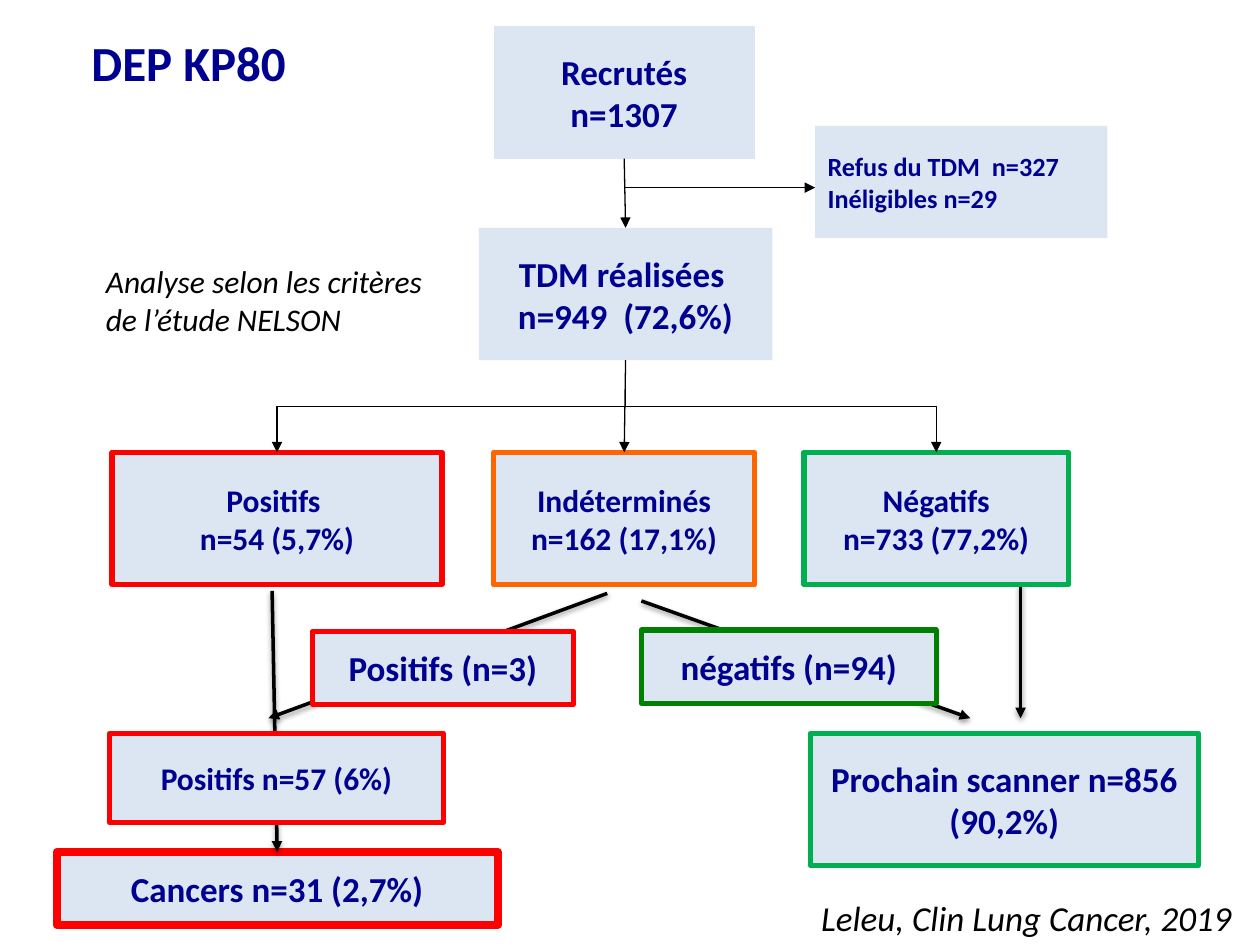
from lxml.etree import SubElement
from pptx import Presentation
from pptx.dml.color import RGBColor
from pptx.enum.shapes import MSO_CONNECTOR as Link, MSO_SHAPE as Form
from pptx.enum.text import MSO_ANCHOR as Anchor, MSO_AUTO_SIZE as Fit, PP_ALIGN as Align
from pptx.oxml.ns import qn
from pptx.util import Pt

NAVY = RGBColor(0x00, 0x00, 0x90)
BLACK = RGBColor(0x00, 0x00, 0x00)
PALE = RGBColor(0xDC, 0xE6, 0xF2)
RED = RGBColor(0xFF, 0x00, 0x00)
ORANGE = RGBColor(0xFF, 0x66, 0x00)
GREEN = RGBColor(0x00, 0xB0, 0x50)
DARK = RGBColor(0x00, 0x80, 0x00)
FONT = "Calibri"
RECT, STEP = Form.RECTANGLE, Form.FLOWCHART_PROCESS
TALL, LOW = 75.6, 41.8  # common box heights


def style(frame, size, color, align, bold=False, italic=False):
    for para in frame.paragraphs:
        para.alignment = align
        for run in para.runs:
            font = run.font
            font.name, font.size = FONT, Pt(size)
            font.bold, font.italic = bold, italic
            font.color.rgb = color


def node(slide, box, text, size=20, edge=None, width=3, form=RECT, align=Align.CENTER):
    """Pale box of the flow chart."""
    shape = slide.shapes.add_shape(form, *map(Pt, box))
    shape.shadow.inherit = False
    shape.fill.solid()
    shape.fill.fore_color.rgb = PALE
    if edge is None:
        shape.line.fill.background()
    else:
        shape.line.color.rgb = edge
        shape.line.width = Pt(width)
    frame = shape.text_frame
    frame.text = text
    frame.word_wrap = True
    frame.vertical_anchor = Anchor.MIDDLE
    style(frame, size, NAVY, align, bold=True)
    return shape


def label(slide, box, text, size, color=BLACK, align=Align.LEFT, wrap=True, fit=Fit.SHAPE_TO_FIT_TEXT, **look):
    frame = slide.shapes.add_textbox(*map(Pt, box)).text_frame
    frame.text = text
    frame.word_wrap = wrap
    frame.auto_size = fit
    style(frame, size, color, align, **look)


def arrow(slide, start, end, width=0.75, shade=False, kind=Link.STRAIGHT):
    line = slide.shapes.add_connector(kind, *map(Pt, start + end))
    line.line.color.rgb = BLACK
    line.line.width = Pt(width)
    props = line._element.spPr
    SubElement(props.find(qn("a:ln")), qn("a:tailEnd"), type="triangle")
    glow = SubElement(props, qn("a:effectLst"))
    if shade:
        cast = SubElement(glow, qn("a:outerShdw"), blurRad=str(Pt(3.1)), dist=str(Pt(1.6)),
                          dir="5400000", rotWithShape="0")
        tint = SubElement(cast, qn("a:srgbClr"), val="000000")
        SubElement(tint, qn("a:alpha"), val="38000")
    return line


def elbow(slide, start, end, form="bentConnector3"):
    """Bent arrow that leaves downwards: a turned and, to the right, flipped connector."""
    (x1, y1), (x2, y2) = start, end
    wide, high = y2 - y1, abs(x2 - x1)
    left, top = (x1 + x2 - wide) / 2, (y1 + y2 - high) / 2
    line = arrow(slide, (left, top), (left + wide, top + high), kind=Link.ELBOW)
    props = line._element.spPr
    props.find(qn("a:prstGeom")).set("prst", form)
    turn = props.find(qn("a:xfrm"))
    if x2 > x1:
        turn.set("rot", "16200000")
        turn.set("flipH", "1")
    else:
        turn.set("rot", "5400000")


def join(slide, upper, lower):
    line = arrow(slide, (0, 0), (1, 1))
    line.begin_connect(upper, 2)
    line.end_connect(lower, 0)


def foot(shape):
    """Middle of the lower side, in points."""
    return (shape.left + shape.width / 2) / Pt(1), (shape.top + shape.height) / Pt(1)


def notes(slide, x, y):
    label(slide, (x, y, 193, 97), "DEP KP80 ", 28, NAVY, Align.CENTER, fit=Fit.NONE, bold=True)
    label(slide, (x + 39, y + 131, 204.5, 51), "Analyse selon les critères de l’étude NELSON", 18, italic=True)
    label(slide, (x + 447.8, y + 494, 257.8, 31.7), "Leleu, Clin Lung Cancer, 2019", 20, wrap=False, italic=True)


def intake(slide, x, y):
    """Recruitment, exclusions and scans done."""
    scans = node(slide, (x - 8.6, y + 115.2, 167.8, TALL), "TDM réalisées \nn=949  (72,6%)")
    node(slide, (x + 183.6, y + 57, 167, 64), "Refus du TDM  n=327\nInéligibles n=29", 15, align=Align.LEFT)
    elbow(slide, (x + 74.8, y + 47.5), (x + 183.6, y + 92.2), "bentConnector2")
    start = node(slide, (x, y, 149, TALL), "Recrutés\nn=1307", form=STEP)
    join(slide, start, scans)
    return scans


def triage(slide, x, y, scans):
    """Three groups of scan results."""
    groups = [
        (0, 188.6, "Positifs \nn=54 (5,7%)", RED),
        (218.2, 149, "Indéterminés\nn=162 (17,1%)", ORANGE),
        (395.4, 151.2, "Négatifs\nn=733 (77,2%)", GREEN),
    ]
    boxes = [node(slide, (x + dx, y, wide, TALL), text, 18, edge) for dx, wide, text, edge in groups]
    for box in (boxes[0], boxes[2]):
        elbow(slide, foot(scans), (foot(box)[0], y))
    join(slide, scans, boxes[1])


def outcome(slide, x, y):
    """Second reading, final groups and cancers."""
    def ray(x1, y1, x2, y2):
        return arrow(slide, (x + x1, y + y1), (x + x2, y + y2), 2, shade=True)

    def part(dx, dy, wide, high, *rest, **look):
        return node(slide, (x + dx, y + dy, wide, high), *rest, **look)

    part(430.6, 84, 221.8, TALL, "Prochain scanner n=856 (90,2%)", 20, GREEN)
    cancer = part(0, 151.7, 252, LOW, "Cancers n=31 (2,7%)", 20, RED, 4.5, form=STEP)
    ray(314.6, 4.1, 121, 75.4)
    part(146.2, 25.7, 149, LOW, "Positifs (n=3)", 20, RED, form=STEP)
    ray(334.1, 8.4, 522, 75.4)
    part(334.1, 25, 168.5, LOW, "négatifs (n=94)", 20, DARK, form=STEP)
    ray(550.8, -57, 550.8, 75.4)
    ray(123.1, 2.7, 126, 151.7).end_connect(cancer, 0)
    part(30.2, 84, 190.8, 51, "Positifs n=57 (6%)", 18, RED)


def main():
    deck = Presentation()
    deck.slide_width, deck.slide_height = Pt(720), Pt(540)
    slide = deck.slides.add_slide(deck.slide_layouts[6])
    notes(slide, 14.4, 15)
    scans = intake(slide, 282.2, 15)
    outcome(slide, 32.4, 335)
    triage(slide, 64, 258.5, scans)
    deck.save("out.pptx")


if __name__ == "__main__":
    main()
